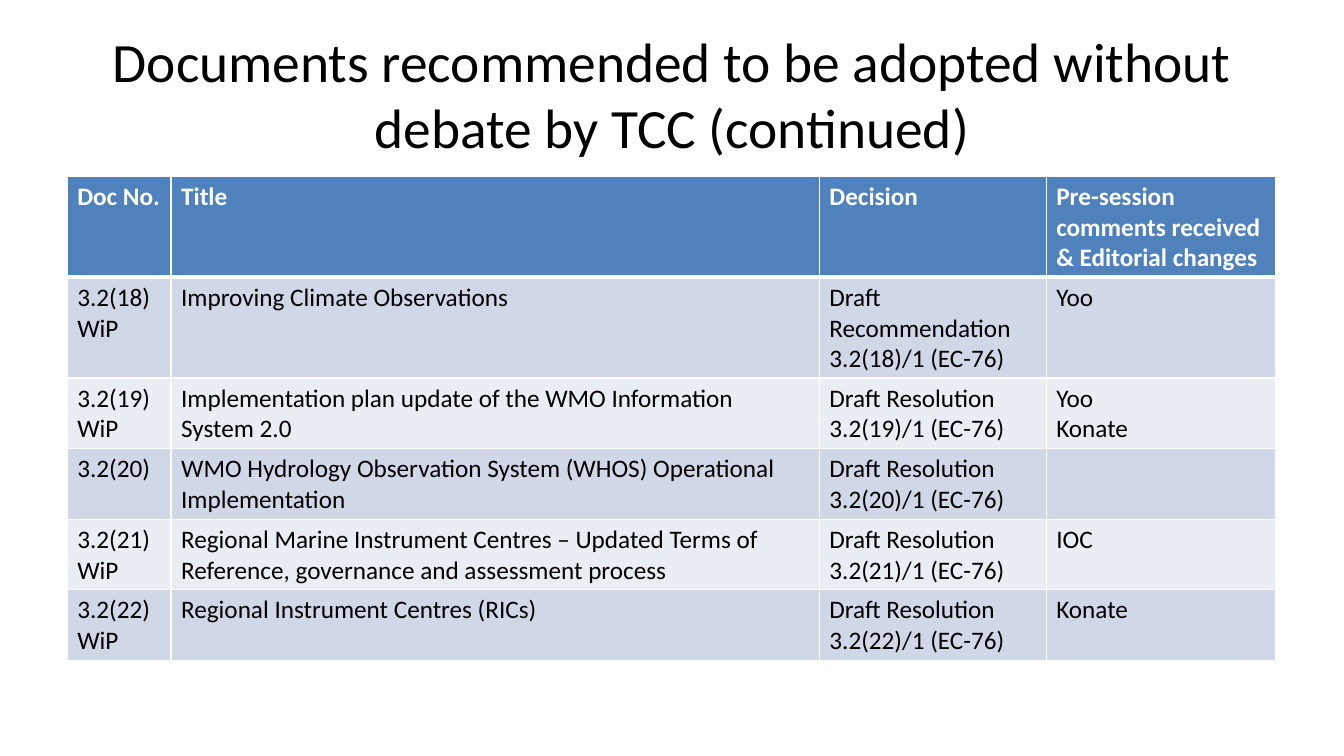
from lxml import etree
from pptx import Presentation
from pptx.dml.color import RGBColor
from pptx.enum.text import MSO_ANCHOR, PP_ALIGN
from pptx.oxml.ns import qn
from pptx.util import Emu, Inches, Pt

CENTER = PP_ALIGN.CENTER
MIDDLE = MSO_ANCHOR.MIDDLE

FONT = "Calibri"
BLACK, WHITE = "000000", "FFFFFF"
HEADER_FILL = "4F81BD"
BAND_FILLS = ("D0D8E8", "E9EDF4")
MARGIN = 0.05  # share of the slide's width
COLUMN_WIDTHS = (1.03, 6.43, 2.25, 2.28)
ROW_HEIGHTS = (1, 1, 0.7, 0.7, 0.7, 0.7)

TITLE = "Documents recommended to be adopted without debate by TCC (continued)"
HEADINGS = ("Doc No.", "Title", "Decision",
            "Pre-session comments received\n& Editorial changes")
DOCUMENTS = (
    ("3.2(18)\nWiP", "Improving Climate Observations",
     "Draft Recommendation 3.2(18)/1 (EC-76)", "Yoo"),
    ("3.2(19)\nWiP", "Implementation plan update of the WMO Information System 2.0",
     "Draft Resolution 3.2(19)/1 (EC-76)", "Yoo\nKonate"),
    ("3.2(20)", "WMO Hydrology Observation System (WHOS) Operational Implementation",
     "Draft Resolution 3.2(20)/1 (EC-76)", ""),
    ("3.2(21)\nWiP", "Regional Marine Instrument Centres – Updated Terms of Reference, "
     "governance and assessment process",
     "Draft Resolution 3.2(21)/1 (EC-76)", "IOC"),
    ("3.2(22)\nWiP", "Regional Instrument Centres (RICs)",
     "Draft Resolution 3.2(22)/1 (EC-76)", "Konate"),
)


def rgb(value):
    return RGBColor.from_string(value)


def write(frame, text, size, color, bold=False, align=None):
    frame.text = text
    for paragraph in frame.paragraphs:
        paragraph.alignment = align
        font = paragraph.font
        font.name, font.size, font.bold = FONT, Pt(size), bold
        font.color.rgb = rgb(color)


def add_borders(cell, bottom_width):
    properties = cell._tc.get_or_add_tcPr()
    for side, width in (("L", 1), ("R", 1), ("T", 1), ("B", bottom_width)):
        line = etree.SubElement(properties, qn(f"a:ln{side}"), w=str(Pt(width)))
        fill = etree.SubElement(line, qn("a:solidFill"))
        etree.SubElement(fill, qn("a:srgbClr"), val=WHITE)


def add_title(slide, slide_width, slide_height):
    box = slide.shapes.add_textbox(
        Emu(int(slide_width * MARGIN)), Emu(int(slide_height * 0.04)),
        Emu(int(slide_width * (1 - 2 * MARGIN))), Emu(int(slide_height / 6)))
    frame = box.text_frame
    frame.word_wrap = True
    frame.vertical_anchor = MIDDLE
    write(frame, TITLE, 39.6, BLACK, align=CENTER)


def add_document_table(slide, slide_width):
    rows = (HEADINGS, *DOCUMENTS)
    table = slide.shapes.add_table(
        len(rows), len(HEADINGS), Emu(int(slide_width * MARGIN)), Inches(1.75),
        Inches(sum(COLUMN_WIDTHS)), Inches(sum(ROW_HEIGHTS))).table
    for column, width in zip(table.columns, COLUMN_WIDTHS):
        column.width = Inches(width)
    for row, height in zip(table.rows, ROW_HEIGHTS):
        row.height = Inches(height)
    for row_index, texts in enumerate(rows):
        is_header = row_index == 0
        fill = HEADER_FILL if is_header else BAND_FILLS[(row_index - 1) % 2]
        for column_index, text in enumerate(texts):
            cell = table.cell(row_index, column_index)
            add_borders(cell, 3 if is_header else 1)
            cell.fill.solid()
            cell.fill.fore_color.rgb = rgb(fill)
            write(cell.text_frame, text, 18, WHITE if is_header else BLACK, is_header)


def main():
    presentation = Presentation()
    presentation.slide_width = Inches(13.33)
    presentation.slide_height = Inches(7.5)
    slide = presentation.slides.add_slide(presentation.slide_layouts[6])
    add_title(slide, presentation.slide_width, presentation.slide_height)
    add_document_table(slide, presentation.slide_width)
    presentation.save("out.pptx")


if __name__ == "__main__":
    main()
